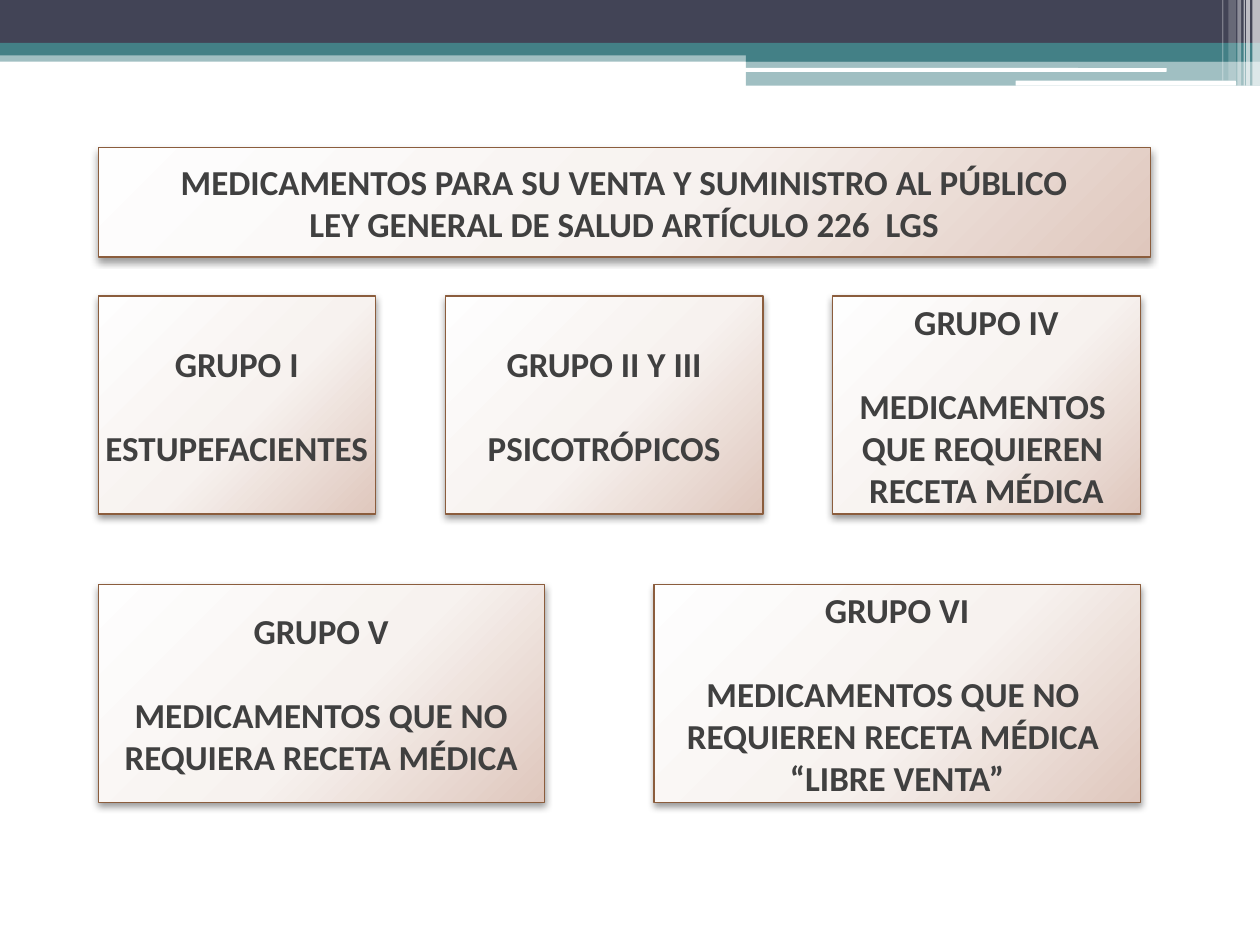
"""Build the slide that lists the groups of medicines by rule of sale."""
from lxml import etree
from pptx import Presentation
from pptx.dml.color import RGBColor
from pptx.enum.shapes import MSO_SHAPE
from pptx.enum.text import MSO_ANCHOR, MSO_AUTO_SIZE, PP_ALIGN
from pptx.oxml import parse_xml
from pptx.oxml.ns import nsdecls, qn
from pptx.util import Inches, Pt

RECT, ROUND = MSO_SHAPE.RECTANGLE, MSO_SHAPE.ROUNDED_RECTANGLE
MIDDLE, CENTER, FIXED = MSO_ANCHOR.MIDDLE, PP_ALIGN.CENTER, MSO_AUTO_SIZE.NONE
COLORS = {"navy": "424456", "teal": "438086", "white": "FFFFFF",
          "edge": "8B5D3D", "text": "404040", "shade": "000000"}
STOPS = [(0, "FEFEFE"), (55, "F7F2EF"), (100, "DFC7BD")]
FONT = {"name": "Calibri", "size": Pt(20), "bold": True}
FRAME = {"word_wrap": False, "auto_size": FIXED, "vertical_anchor": MIDDLE}
COLS, ROWS = 100, 75
LEFT, HIGH = 7.8, 17.3

BANDS = [
    (RECT, "teal", 50, 0, 4, 100, 0.9),
    (RECT, "navy", 100, 0, 0, 100, 3.4),
    (RECT, "teal", 100, 0, 3.4, 100, 1),
    (RECT, "teal", 100, 59.2, 3.9, 40.8, 1),
    (RECT, "teal", 50, 59.2, 4.8, 40.8, 2),
    (ROUND, "white", 100, 59.1, 5.4, 33.5, 0.3),
    (ROUND, "white", 100, 80.6, 6.4, 17.5, 0.4),
]
STRIPES = [(99.4, 0.6, 6.8, 65), (98.9, 0.3, 6.8, 65), (98.7, 0.1, 6.8, 60),
           (98.2, 0.3, 6.8, 40), (97.5, 0.6, 6.4, 20), (97, 0.1, 6.4, 30)]
TITLE = ["MEDICAMENTOS PARA SU VENTA Y SUMINISTRO AL PÚBLICO",
         "LEY GENERAL DE SALUD ARTÍCULO 226  LGS"]
GROUPS = [
    (23.5, 5.55, [
        (22, ["GRUPO I", "ESTUPEFACIENTES"]),
        (25.2, ["GRUPO II Y III", "PSICOTRÓPICOS"]),
        (24.4, ["GRUPO IV", "MEDICAMENTOS ", "QUE REQUIEREN ", "RECETA MÉDICA"]),
    ]),
    (46.4, 8.7, [
        (35.4, ["GRUPO V", "MEDICAMENTOS QUE NO", "REQUIERA RECETA MÉDICA"]),
        (38.6, ["GRUPO VI", "MEDICAMENTOS QUE NO ",
                "REQUIEREN RECETA MÉDICA ", "“LIBRE VENTA”"]),
    ]),
]


def tint(name):
    """Return the named colour."""
    return RGBColor.from_string(COLORS[name])


def assign(item, values):
    """Set each attribute in a dict of format values."""
    for key, value in values.items():
        setattr(item, key, value)


class Deck:
    """Hold the style and the current slide."""

    def __init__(self):
        """Open a deck with one title-only slide."""
        self.file = Presentation()
        assign(self.file, {"slide_width": Inches(10), "slide_height": Inches(7.5)})
        self.slide = self.file.slides.add_slide(self.file.slide_layouts[5])

    def place(self, x, y, w, h):
        """Turn columns and rows into lengths."""
        col, row = self.file.slide_width / COLS, self.file.slide_height / ROWS
        return [round(n) for n in (x * col, y * row, w * col, h * row)]

    def band(self, kind, color, alpha, *spot):
        """Add a plain band of one colour."""
        shape = self.slide.shapes.add_shape(kind, *self.place(*spot))
        shape.shadow.inherit = False
        shape.fill.solid()
        shape.fill.fore_color.rgb = tint(color)
        shape.line.fill.background()
        if alpha < 100:
            paint = shape._element.spPr.find(".//" + qn("a:srgbClr"))
            etree.SubElement(paint, qn("a:alpha")).set("val", str(alpha * 1000))

    def card(self, lines, *spot, gap=0):
        """Add a shaded card with a gap below its first line."""
        shape = self.slide.shapes.add_shape(RECT, *self.place(*spot))
        self.dress(shape, lines, gap)

    def title(self, lines, *spot):
        """Move the title and dress it as a card."""
        shape = self.slide.shapes.title
        keys = ("left", "top", "width", "height")
        assign(shape, dict(zip(keys, self.place(*spot))))
        self.dress(shape, lines, 0)

    def dress(self, shape, lines, gap):
        """Give a shape the card look and its text."""
        shape.fill.background()
        props = shape._element.spPr
        stops = "".join(f'<a:gs pos="{pos * 1000}"><a:srgbClr val="{color}"/></a:gs>'
                        for pos, color in STOPS)
        props.replace(props.find(qn("a:noFill")), parse_xml(
            f'<a:gradFill {nsdecls("a")} rotWithShape="1"><a:gsLst>{stops}</a:gsLst>'
            '<a:path path="circle"><a:fillToRect l="-40000" t="-90000" '
            'r="140000" b="190000"/></a:path></a:gradFill>'))
        shape.line.color.rgb = tint("edge")
        shape.line.width = Pt(0.75)
        shape.shadow.inherit = False
        props.find(qn("a:effectLst")).append(parse_xml(
            f'<a:outerShdw {nsdecls("a")} blurRad="{Pt(4.1)}" dist="{Pt(2)}" '
            f'dir="5400000" rotWithShape="0"><a:srgbClr val="{COLORS["shade"]}">'
            '<a:alpha val="40000"/></a:srgbClr></a:outerShdw>'))
        frame = shape.text_frame
        assign(frame, FRAME)
        frame.text = "\n".join(lines)
        for para in frame.paragraphs:
            para.alignment = CENTER
            font = para.runs[0].font
            assign(font, FONT)
            font.color.rgb = tint("text")
        frame.paragraphs[0].space_after = Pt(gap)

    def row(self, y, gap, cards):
        """Add cards from left to right with equal gaps."""
        x = LEFT
        for width, lines in cards:
            self.card(lines, x, y, width, HIGH, gap=24)
            x += width + gap


def main():
    """Draw the slide and save it."""
    deck = Deck()
    for band in BANDS:
        deck.band(*band)
    for x, width, height, alpha in STRIPES:
        deck.band(RECT, "white", alpha, x, 0, width, height)
    deck.title(TITLE, LEFT, 11.7, 83.5, 8.7)
    for group in GROUPS:
        deck.row(*group)
    deck.file.save("out.pptx")


if __name__ == "__main__":
    main()
